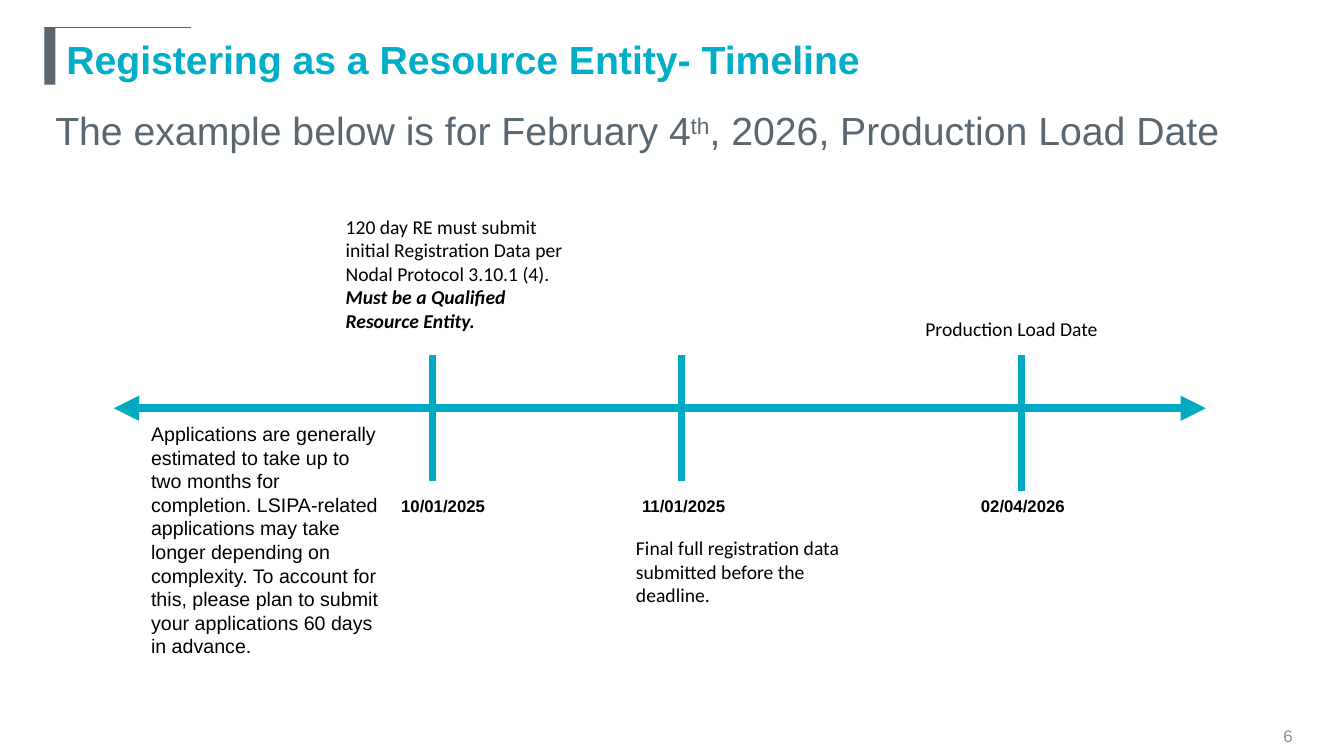
from dataclasses import dataclass

from lxml import etree
from pptx import Presentation
from pptx.dml.color import RGBColor
from pptx.enum.shapes import MSO_CONNECTOR, MSO_SHAPE
from pptx.enum.text import MSO_ANCHOR, PP_ALIGN
from pptx.oxml.ns import qn
from pptx.util import Pt

STRAIGHT = MSO_CONNECTOR.STRAIGHT
RECTANGLE = MSO_SHAPE.RECTANGLE
TOP, MIDDLE = MSO_ANCHOR.TOP, MSO_ANCHOR.MIDDLE
LEFT, CENTER = PP_ALIGN.LEFT, PP_ALIGN.CENTER
EMU_PER_PX = 9144  # 100 px to the inch


@dataclass(frozen=True)
class Theme:
    title: str = "00AEC7"
    axis: str = "00AAC3"
    slate: str = "5B6770"
    grey: str = "8C8C8C"
    black: str = "000000"
    sans: str = "Arial"
    note: str = "Calibri"
    heading_size: int = 28
    note_size: int = 14
    small_size: int = 12


THEME = Theme()


def px(*lengths):
    return [length * EMU_PER_PX for length in lengths]


def style(size, color, name=THEME.sans, **extra):
    return {"size": Pt(size), "color": color, "name": name, **extra}


HEADING = style(THEME.heading_size, THEME.title, bold=True)
LEAD = style(THEME.heading_size, THEME.slate)
DATE = style(THEME.small_size, THEME.black, bold=True)
NUMBER = style(THEME.small_size, THEME.grey)
NOTE = style(THEME.note_size, THEME.black, THEME.note)
STRONG_NOTE = {**NOTE, "bold": True, "italic": True}
ADVICE = style(THEME.note_size, THEME.black)


def add_text(page, box, paragraphs, anchor=TOP, align=LEFT, before=0):
    """Each paragraph is a list of (text, format, baseline) spans."""
    frame = page.shapes.add_textbox(*px(*box)).text_frame
    frame.word_wrap = True
    frame.vertical_anchor = anchor
    for index, spans in enumerate(paragraphs):
        para = frame.add_paragraph() if index else frame.paragraphs[0]
        para.alignment = align
        para.space_before = Pt(before)
        for text, values, baseline in spans:
            span = para.add_run()
            span.text = text
            for key, value in values.items():
                if key == "color":
                    span.font.color.rgb = RGBColor.from_string(value)
                else:
                    setattr(span.font, key, value)
            if baseline:
                span.font._element.set("baseline", str(baseline * 1000))


def add_line(page, start, end, color, width, arrows=False):
    line = page.shapes.add_connector(STRAIGHT, *px(*start, *end))
    line.line.color.rgb = RGBColor.from_string(color)
    line.line.width = Pt(width)
    if arrows:
        outline = line.line._get_or_add_ln()
        for tag in ("a:headEnd", "a:tailEnd"):
            etree.SubElement(outline, qn(tag), type="triangle")
    etree.SubElement(line._element.spPr, qn("a:effectLst"))


def add_header(page, box):
    left, top, width, height = box
    # Corner mark
    bar = page.shapes.add_shape(RECTANGLE, *px(left, top, 11, 57))
    bar.shadow.inherit = False
    bar.fill.solid()
    bar.fill.fore_color.rgb = RGBColor.from_string(THEME.slate)
    bar.line.fill.background()
    add_line(page, (left, top), (left + 145, top), THEME.slate, 0.75)
    # Title and lead sentence
    add_text(page, (left + 12, top, width - 12, 62),
             [[("Registering as a Resource Entity- Timeline", HEADING, 0)]], MIDDLE)
    add_text(page, (left + 1, top + 74, width - 1, height - 74),
             [[("The example below is for February 4", LEAD, 0),
               ("th", LEAD, 30),
               (", 2026, Production Load Date", LEAD, 0)]], before=3)


def add_timeline(page, box):
    left, top, width, height = box
    axis = top + 197
    # Axis
    add_line(page, (left, axis), (left + width, axis), THEME.axis, 6, arrows=True)
    # Milestones: tick x, tick length, date x, date
    milestones = [
        (316, 125, 275, "10/01/2025"),
        (563, 125, 514, "11/01/2025"),
        (900, 135, 850, "02/04/2026"),
    ]
    for tick, length, date_left, date in milestones:
        add_line(page, (left + tick, axis - 53), (left + tick, axis - 53 + length),
                 THEME.axis, 4.5)
        add_text(page, (left + date_left, axis + 82, 142, 30), [[(date, DATE, 0)]])
    # Notes: x, y, height, paragraphs
    notes = [
        (220, 0, 128, [
            [("120 day RE must submit initial Registration Data per "
              "Nodal Protocol 3.10.1 (4).", NOTE, 0)],
            [("Must be a Qualified Resource Entity.", STRONG_NOTE, 0)]]),
        (27, 206, height - 206, [
            [("Applications are generally estimated to take up to two months for "
              "completion. LSIPA-related applications may take longer depending on "
              "complexity. To account for this, please plan to submit your "
              "applications 60 days in advance.", ADVICE, 0)]]),
        (795, 101, 34, [[("Production Load Date", NOTE, 0)]]),
        (508, 319, 81, [
            [("Final full registration data submitted before the deadline.", NOTE, 0)]]),
    ]
    for note_left, note_top, note_height, paragraphs in notes:
        add_text(page, (left + note_left, top + note_top, 250, note_height), paragraphs)


def add_page_number(page, box):
    add_text(page, box, [[("6", NUMBER, 0)]], MIDDLE, CENTER)


def main():
    deck = Presentation()
    deck.slide_width, deck.slide_height = px(1333, 750)
    page = deck.slides.add_slide(deck.slide_layouts[6])
    add_header(page, (44, 27, 1245, 145))
    add_timeline(page, (113, 208, 1083, 452))
    add_page_number(page, (1233, 714, 89, 32))
    deck.save("out.pptx")


if __name__ == "__main__":
    main()
